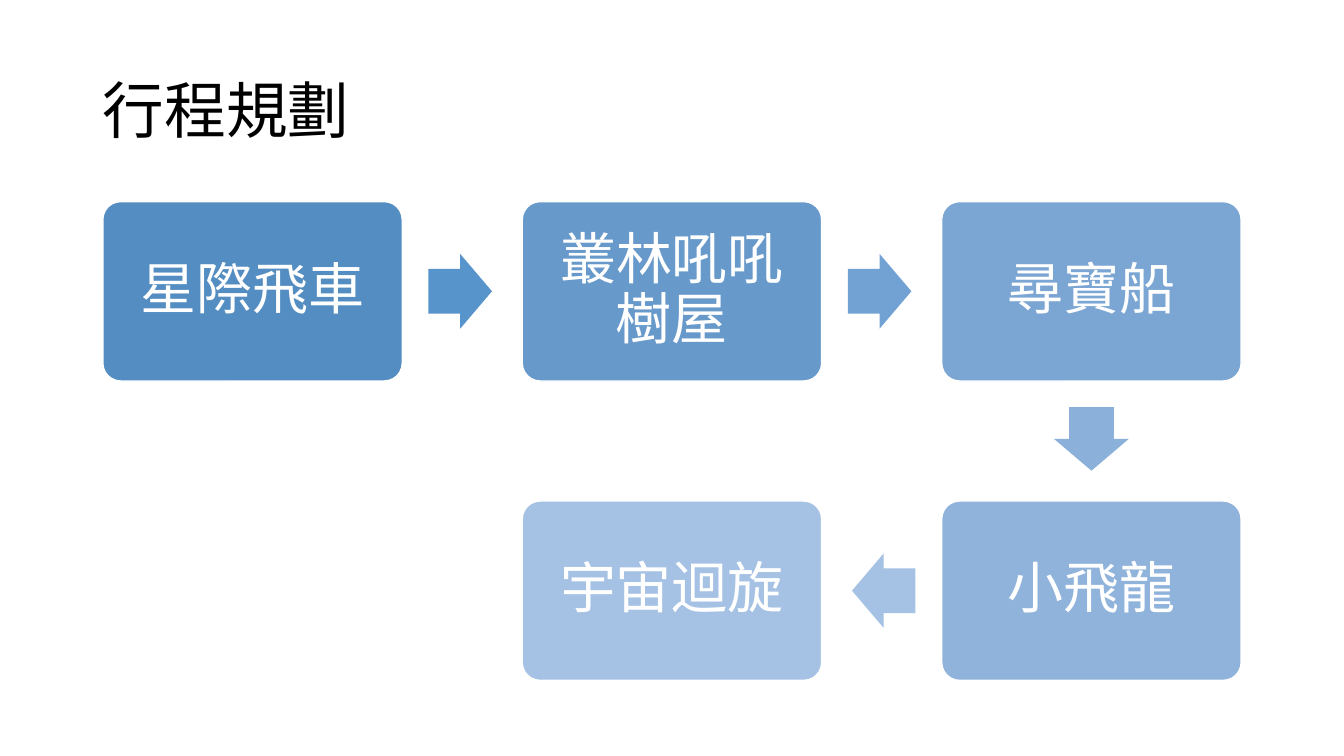
import pptx
import pptx.util
import pptx.dml.color
import pptx.enum.shapes
import pptx.enum.text

Inches = pptx.util.Inches
Shape = pptx.enum.shapes.MSO_SHAPE
Align = pptx.enum.text.PP_ALIGN

# Content: label, column, row, fill
TITLE = "行程規劃"
STOPS = [
    ("星際飛車", 0, 0, "538DC1"),
    ("叢林吼吼樹屋", 1, 0, "6799CA"),
    ("尋寶船", 2, 0, "7BA6D3"),
    ("小飛龍", 2, 1, "90B3DB"),
    ("宇宙迴旋", 1, 1, "A5C1E3"),
]
ARROWS = ["5794CB", "71A2D3", "8BB1DB", "A5C1E3"]

# Grid
LEFT, TOP = 1.02, 2
STEP_X, STEP_Y = 4.16, 2.97
BOX_W, BOX_H = 2.97, 1.78
ARROW_W, ARROW_H = 0.63, 0.74
BACK = 0.02  # arrows sit slightly toward the box they leave
TURN = {(1, 0): 0, (0, 1): 90, (-1, 0): 180}


def color(code):
    return pptx.dml.color.RGBColor.from_string(code)


def write(shape, text, size=40, ink="FFFFFF", align=Align.CENTER, after=0):
    frame = shape.text_frame
    frame.word_wrap = True
    frame.auto_size = pptx.enum.text.MSO_AUTO_SIZE.NONE
    frame.vertical_anchor = pptx.enum.text.MSO_ANCHOR.MIDDLE
    para = frame.paragraphs[0]
    para.alignment = align
    para.line_spacing = 0.9
    para.space_after = pptx.util.Pt(after)
    run = para.add_run()
    run.text = text
    run.font.name = "Calibri"
    run.font.size = pptx.util.Pt(size)
    run.font.color.rgb = color(ink)


def draw(slide, kind, mid, size, fill):
    """Add a filled preset shape centred on a point."""
    x, y = mid
    w, h = size
    shape = slide.shapes.add_shape(
        kind, Inches(x - w / 2), Inches(y - h / 2), Inches(w), Inches(h))
    shape.shadow.inherit = False
    shape.fill.solid()
    shape.fill.fore_color.rgb = color(fill)
    shape.line.fill.background()
    return shape


def center(col, row):
    return LEFT + col * STEP_X + BOX_W / 2, TOP + row * STEP_Y + BOX_H / 2


def main():
    deck = pptx.Presentation()
    deck.slide_width, deck.slide_height = Inches(13.33), Inches(7.5)
    slide = deck.slides.add_slide(deck.slide_layouts[5])

    # Title
    title = slide.shapes.title
    title.left, title.top = Inches(0.92), Inches(0.4)
    title.width, title.height = Inches(11.5), Inches(1.45)
    write(title, TITLE, size=44, ink="000000", align=Align.LEFT)

    # Stops
    for label, col, row, fill in STOPS:
        box = draw(slide, Shape.ROUNDED_RECTANGLE, center(col, row),
                   (BOX_W, BOX_H), fill)
        box.adjustments[0] = 0.1
        box.line.color.rgb = color("FFFFFF")
        box.line.width = pptx.util.Pt(1)
        frame = box.text_frame
        frame.margin_left = frame.margin_right = Inches(0.17)
        frame.margin_top = frame.margin_bottom = Inches(0.17)
        write(box, label, after=14)

    # Arrows between consecutive stops
    for start, end, fill in zip(STOPS, STOPS[1:], ARROWS):
        way = end[1] - start[1], end[2] - start[2]
        pairs = zip(center(*start[1:3]), center(*end[1:3]), way)
        mid = [(a + b) / 2 - BACK * d for a, b, d in pairs]
        arrow = draw(slide, Shape.RIGHT_ARROW, mid, (ARROW_W, ARROW_H), fill)
        arrow.adjustments[0] = 0.6
        arrow.adjustments[1] = 0.5
        arrow.rotation = TURN[way]

    deck.save("out.pptx")


if __name__ == "__main__":
    main()
